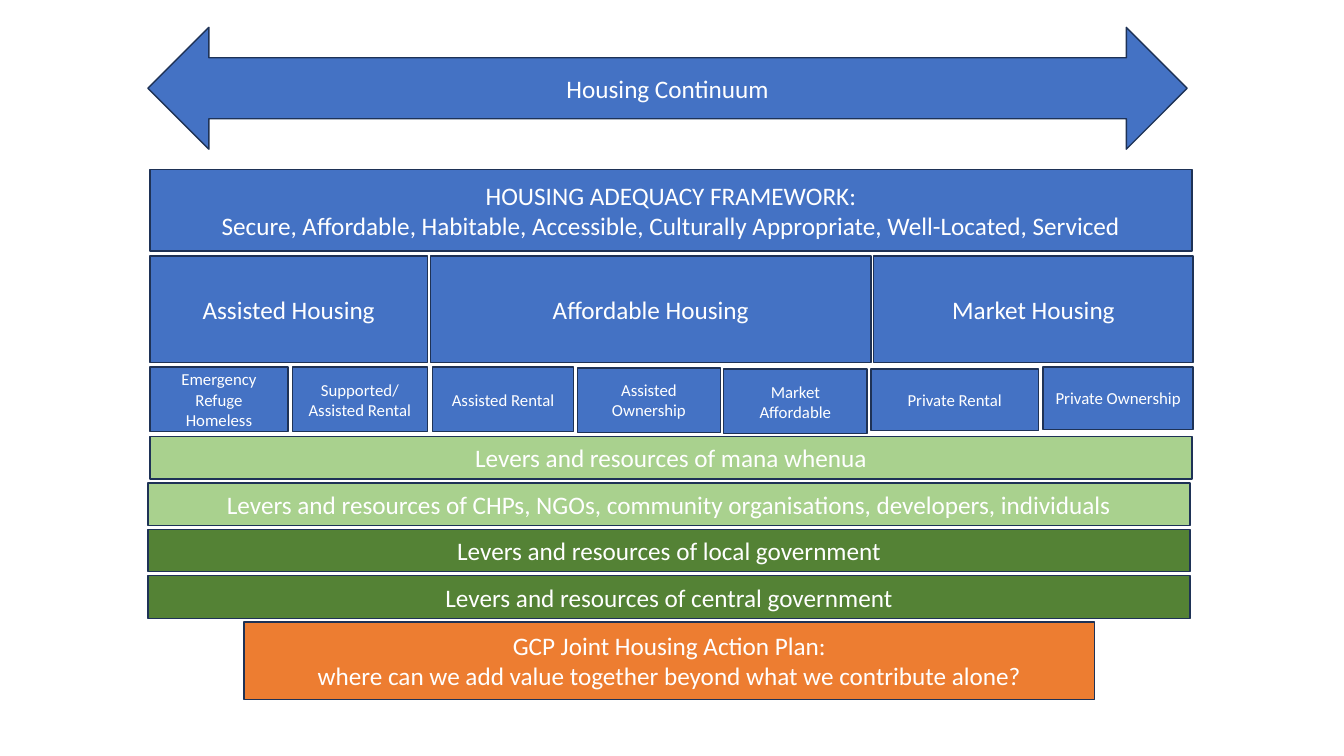
from pptx import Presentation
from pptx.dml.color import RGBColor
from pptx.enum.shapes import MSO_SHAPE
from pptx.enum.text import MSO_ANCHOR, PP_ALIGN
from pptx.util import Cm, Pt

COLOURS = {
    "blue": "4472C4",
    "light green": "A9D18E",
    "dark green": "548235",
    "orange": "ED7D31",
    "outline": "1E3256",
    "text": "FFFFFF",
}
FONT = "Calibri"
FULL_LEFT, FULL_WIDTH = 3.78, 26.26
LEVER_LEFT, LEVER_TOP, LEVER_STEP, LEVER_HEIGHT = 3.73, 11, 1.17, 1.07

# text, left, width
SECTORS = [
    ("Assisted Housing", 3.78, 6.99),
    ("Affordable Housing", 10.85, 11.1),
    ("Market Housing", 22.02, 8.05),
]
# text, left, top, width, height
TENURES = [
    ("Emergency\nRefuge\nHomeless", 3.78, 9.25, 3.48, 1.63),
    ("Supported/ Assisted Rental", 7.37, 9.25, 3.4, 1.63),
    ("Assisted Rental", 10.9, 9.25, 3.56, 1.63),
    ("Assisted Ownership", 14.55, 9.27, 3.61, 1.63),
    ("Market Affordable", 18.24, 9.3, 3.61, 1.63),
    ("Private Rental", 21.95, 9.3, 4.22, 1.55),
    ("Private Ownership", 26.29, 9.25, 3.78, 1.57),
]
# text, left, colour
LEVERS = [
    ("Levers and resources of mana whenua", FULL_LEFT, "light green"),
    ("Levers and resources of CHPs, NGOs, community organisations, "
     "developers, individuals", LEVER_LEFT, "light green"),
    ("Levers and resources of local government", LEVER_LEFT, "dark green"),
    ("Levers and resources of central government", LEVER_LEFT, "dark green"),
]


def colour(name):
    return RGBColor.from_string(COLOURS[name])


def add_block(slide, text, left, top, width, height, fill="blue", size=18,
              kind=MSO_SHAPE.RECTANGLE):
    """Add an outlined shape with centred text, one paragraph per line."""
    shape = slide.shapes.add_shape(kind, Cm(left), Cm(top), Cm(width), Cm(height))
    shape.shadow.inherit = False
    shape.fill.solid()
    shape.fill.fore_color.rgb = colour(fill)
    shape.line.color.rgb = colour("outline")
    shape.line.width = Pt(1)

    frame = shape.text_frame
    frame.word_wrap = True
    frame.vertical_anchor = MSO_ANCHOR.MIDDLE
    frame.text = text
    for paragraph in frame.paragraphs:
        paragraph.alignment = PP_ALIGN.CENTER
        paragraph.font.name = FONT
        paragraph.font.size = Pt(size)
        paragraph.font.color.rgb = colour("text")


def add_framework(slide):
    add_block(slide, "Housing Continuum", 3.73, 0.69, 26.19, 3.07,
              kind=MSO_SHAPE.LEFT_RIGHT_ARROW)
    add_block(slide, "HOUSING ADEQUACY FRAMEWORK:\n"
              "Secure, Affordable, Habitable, Accessible, Culturally Appropriate, "
              "Well-Located, Serviced", FULL_LEFT, 4.27, FULL_WIDTH, 2.06)
    for text, left, width in SECTORS:
        add_block(slide, text, left, 6.45, width, 2.69)
    for text, left, top, width, height in TENURES:
        add_block(slide, text, left, top, width, height, size=12)


def add_levers(slide):
    for row, (text, left, fill) in enumerate(LEVERS):
        add_block(slide, text, left, LEVER_TOP + row * LEVER_STEP,
                  FULL_WIDTH, LEVER_HEIGHT, fill)


def main():
    presentation = Presentation()
    presentation.slide_width = Cm(33.87)
    presentation.slide_height = Cm(19.05)
    blank_layout = presentation.slide_layouts.get_by_name("Blank")
    slide = presentation.slides.add_slide(blank_layout)

    add_framework(slide)
    add_levers(slide)
    add_block(slide, "GCP Joint Housing Action Plan:\n"
              "where can we add value together beyond what we contribute alone?",
              6.15, 15.67, 21.44, 1.96, "orange")

    presentation.save("out.pptx")


if __name__ == "__main__":
    main()
